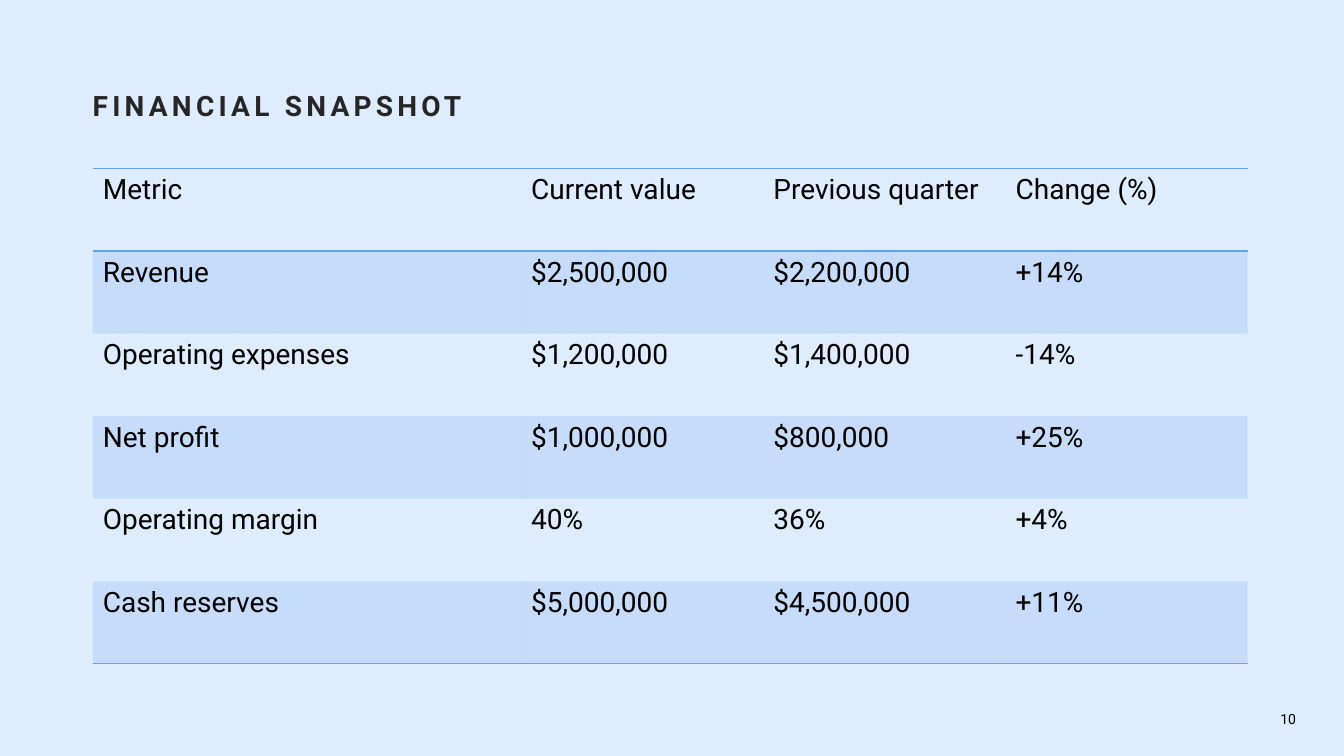
from dataclasses import dataclass

from lxml.etree import SubElement
from pptx import Presentation
from pptx.dml.color import RGBColor
from pptx.enum.text import MSO_ANCHOR, PP_ALIGN
from pptx.oxml.ns import qn
from pptx.util import Pt


@dataclass(frozen=True)
class Theme:
    font: str = "Roboto"
    background: str = "DFECFD"
    accent: str = "60A2F5"
    title_color: str = "262626"
    text_color: str = "000000"
    body_size: int = 20
    number_size: int = 10
    title_spacing: int = 3
    rule_width: int = 1
    band_opacity: int = 20


THEME = Theme()
NO_STYLE_NO_GRID = "{2D5ABB26-0587-4C30-8999-92F81FD0307C}"

LEFT = 66.25
TABLE_TOP = 120.25
COLUMN_WIDTHS = (306, 173, 173, 173)
TABLE_WIDTH = sum(COLUMN_WIDTHS)
ROW_HEIGHT = 59

METRICS = (
    ("Metric", "Current value", "Previous quarter", "Change (%)"),
    ("Revenue", "$2,500,000", "$2,200,000", "+14%"),
    ("Operating expenses", "$1,200,000", "$1,400,000", "-14%"),
    ("Net profit", "$1,000,000", "$800,000", "+25%"),
    ("Operating margin", "40%", "36%", "+4%"),
    ("Cash reserves", "$5,000,000", "$4,500,000", "+11%"),
)


def format_runs(paragraph, size, color, bold=False):
    for run in paragraph.runs:
        run.font.name = THEME.font
        run.font.size = Pt(size)
        run.font.bold = bold
        run.font.color.rgb = RGBColor.from_string(color)


def add_text(slide, text, left, top, width, height, size, color, bold=False):
    text_frame = slide.shapes.add_textbox(Pt(left), Pt(top), Pt(width), Pt(height)).text_frame
    text_frame.word_wrap = True
    text_frame.margin_left = text_frame.margin_right = 0
    text_frame.margin_top = text_frame.margin_bottom = 0
    text_frame.text = text
    format_runs(text_frame.paragraphs[0], size, color, bold)
    return text_frame


def add_title(slide, text):
    text_frame = add_text(slide, text, LEFT, 66.25, TABLE_WIDTH, 44,
                          THEME.body_size, THEME.title_color, bold=True)
    paragraph = text_frame.paragraphs[0]
    paragraph.line_spacing = 0.9
    paragraph.runs[0].font._element.set("spc", str(THEME.title_spacing * 100))


def add_slide_number(slide, number):
    text_frame = add_text(slide, number, 859.75, 502.5, 66, 22.5,
                          THEME.number_size, THEME.text_color)
    text_frame.vertical_anchor = MSO_ANCHOR.MIDDLE
    text_frame.paragraphs[0].alignment = PP_ALIGN.RIGHT


def add_rule(cell, side):
    properties = cell._tc.get_or_add_tcPr()
    line = SubElement(properties, qn(f"a:ln{side}"), w=str(Pt(THEME.rule_width)))
    fill = SubElement(line, qn("a:solidFill"))
    SubElement(fill, qn("a:srgbClr"), val=THEME.accent)


def fill_band(cell):
    cell.fill.solid()
    cell.fill.fore_color.rgb = RGBColor.from_string(THEME.accent)
    color = cell._tc.tcPr.find(".//" + qn("a:solidFill") + "[last()]/" + qn("a:srgbClr")) \
        if cell._tc.tcPr[0].tag == qn("a:solidFill") else cell._tc.tcPr[-1][0]
    SubElement(color, qn("a:alpha"), val=str(THEME.band_opacity * 1000))


def add_metrics_table(slide, rows):
    frame = slide.shapes.add_table(len(rows), len(COLUMN_WIDTHS), Pt(LEFT), Pt(TABLE_TOP),
                                   Pt(TABLE_WIDTH), Pt(ROW_HEIGHT * len(rows)))
    table = frame.table
    table.first_row = table.horz_banding = False
    table._tbl.tblPr.find(qn("a:tableStyleId")).text = NO_STYLE_NO_GRID
    for column, width in zip(table.columns, COLUMN_WIDTHS):
        column.width = Pt(width)

    for row_index, values in enumerate(rows):
        table.rows[row_index].height = Pt(ROW_HEIGHT)
        for column_index, value in enumerate(values):
            cell = table.cell(row_index, column_index)
            cell.text_frame.text = value
            format_runs(cell.text_frame.paragraphs[0], THEME.body_size, THEME.text_color)
            # Rules frame the header and close the table
            if row_index == 0:
                add_rule(cell, "T")
            if row_index in (0, len(rows) - 1):
                add_rule(cell, "B")
            # Every second row is tinted
            if row_index % 2:
                fill_band(cell)
            else:
                cell.fill.background()


def main():
    presentation = Presentation()
    presentation.slide_width = Pt(960)
    presentation.slide_height = Pt(540)
    slide = presentation.slides.add_slide(presentation.slide_layouts[6])

    # Background
    slide.background.fill.solid()
    slide.background.fill.fore_color.rgb = RGBColor.from_string(THEME.background)

    # Content
    add_title(slide, "FINANCIAL SNAPSHOT")
    add_metrics_table(slide, METRICS)
    add_slide_number(slide, "10")
    presentation.save("out.pptx")


if __name__ == "__main__":
    main()
